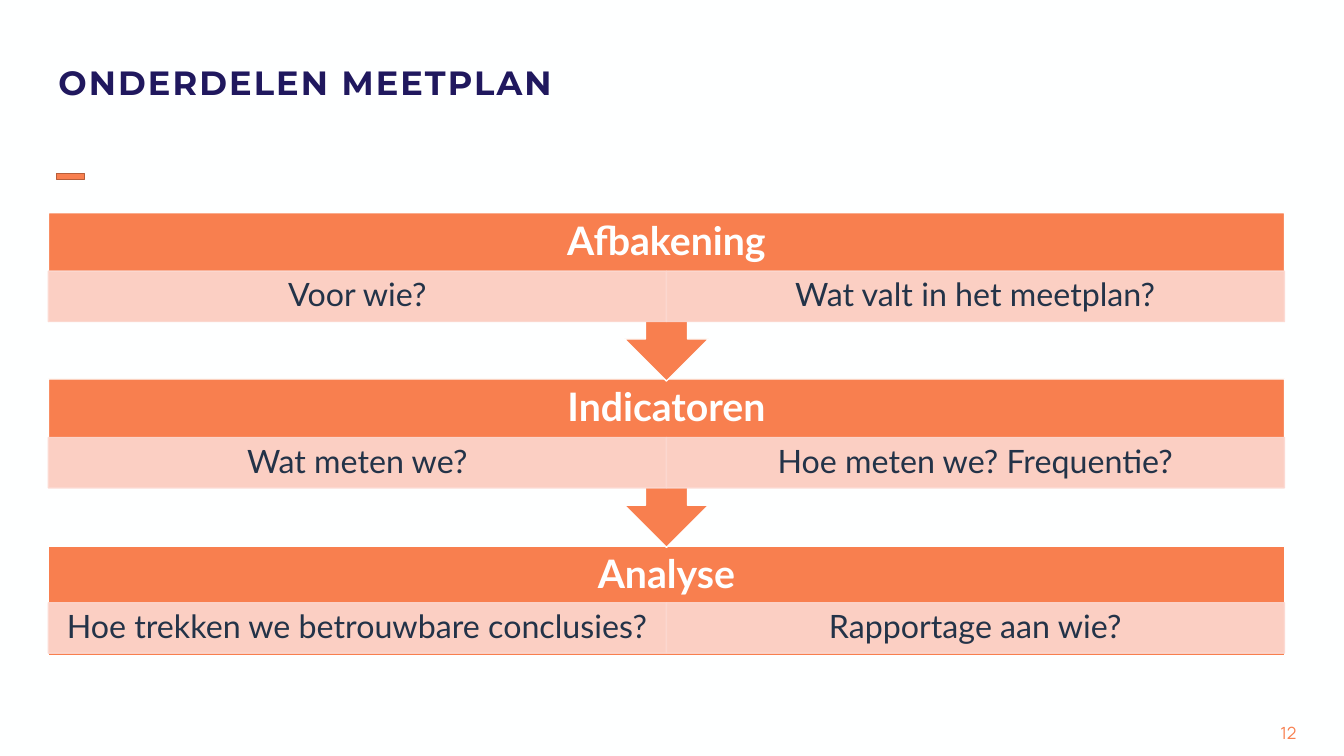
from dataclasses import dataclass

from lxml import etree
from pptx import Presentation
from pptx import util as u
from pptx.dml import color
from pptx.enum import shapes, text
from pptx.oxml import ns


@dataclass(frozen=True)
class Theme:
    background: str = "FEFFFF"
    accent: str = "F87F4F"
    accent_edge: str = "B75E3A"
    tint: str = "FCD8D0"
    ink: str = "233348"
    navy: str = "20185E"
    title_font: str = "Montserrat"
    body_font: str = "Lato"
    number_font: str = "Manrope"
    title_size: int = 24
    heading_size: int = 28
    answer_size: int = 23
    number_size: int = 12


THEME = Theme()
STEPS = [
    ("Afbakening", ["Voor wie?", "Wat valt in het meetplan?"]),
    ("Indicatoren", ["Wat meten we?", "Hoe meten we? Frequentie?"]),
    ("Analyse", ["Hoe trekken we betrouwbare conclusies?", "Rapportage aan wie?"]),
]


def px(length):
    return u.Emu(length * 9144)


def place(box):
    return [px(length) for length in box]


def rgb(value):
    return color.RGBColor.from_string(value)


def write(shape, wording, font, size, ink, bold=False, align=None, spacing=None):
    frame = shape.text_frame
    frame.word_wrap = True
    frame.text = wording
    paragraph = frame.paragraphs[0]
    paragraph.alignment = align
    paragraph.line_spacing = spacing
    paragraph.font.name = font
    paragraph.font.size = u.Pt(size)
    paragraph.font.bold = bold
    paragraph.font.color.rgb = rgb(ink)
    return frame


def add_block(slide, kind, box, fill, line):
    shape = slide.shapes.add_shape(kind, *place(box))
    shape.shadow.inherit = False
    shape.fill.solid()
    shape.fill.fore_color.rgb = rgb(fill)
    shape.line.color.rgb = rgb(line)
    shape.line.width = u.Pt(1)
    return shape


def add_title(slide, box, wording):
    title = slide.shapes.title
    title.left, title.top, title.width, title.height = place(box)
    frame = write(title, wording, THEME.title_font, THEME.title_size, THEME.navy,
                  bold=True, align=text.PP_ALIGN.LEFT, spacing=0.9)
    frame.auto_size = text.MSO_AUTO_SIZE.NONE
    frame.vertical_anchor = text.MSO_ANCHOR.MIDDLE
    frame.paragraphs[0].runs[0].font._element.set("spc", "150")


def add_answer(slide, box, wording):
    cell = add_block(slide, shapes.MSO_SHAPE.RECTANGLE, box, THEME.tint, THEME.tint)
    for tint in cell._element.spPr.iter(ns.qn("a:srgbClr")):
        etree.SubElement(tint, ns.qn("a:alpha"), val="90000")
    frame = write(cell, wording, THEME.body_font, THEME.answer_size, THEME.ink,
                  align=text.PP_ALIGN.CENTER, spacing=0.9)
    frame.vertical_anchor = text.MSO_ANCHOR.MIDDLE
    frame.margin_left = frame.margin_right = px(16)
    frame.margin_top = frame.margin_bottom = px(3)


def add_step(slide, box, heading, answers, last):
    left, top, width, height = box
    kind = shapes.MSO_SHAPE.RECTANGLE if last else shapes.MSO_SHAPE.UP_ARROW_CALLOUT
    block = add_block(slide, kind, box, THEME.accent, THEME.background)
    block.rotation = 0 if last else 180

    label = slide.shapes.add_textbox(*place((left, top, width, 59)))
    frame = write(label, heading, THEME.body_font, THEME.heading_size, THEME.background,
                  bold=True, align=text.PP_ALIGN.CENTER, spacing=0.9)
    frame.vertical_anchor = text.MSO_ANCHOR.MIDDLE
    frame.margin_top = frame.margin_bottom = 0

    answer_width = width // len(answers)
    answer_top = top + (56 if last else 58)
    for column, answer in enumerate(answers):
        cell_box = (left + column * answer_width, answer_top, answer_width, 50)
        add_answer(slide, cell_box, answer)


def add_steps(slide, box, steps):
    left, top, width, height = box
    final = len(steps) - 1
    last_height = 109
    for index in reversed(range(len(steps))):
        step_top = top + index * (height - last_height) // final
        step_height = last_height if index == final else 167
        add_step(slide, (left, step_top, width, step_height), *steps[index], index == final)


def add_slide_number(slide, box, number):
    label = slide.shapes.add_textbox(*place(box))
    write(label, number, THEME.number_font, THEME.number_size, THEME.accent)


def main():
    presentation = Presentation()
    presentation.slide_width, presentation.slide_height = px(1333), px(750)
    slide = presentation.slides.add_slide(presentation.slide_layouts[5])
    slide.background.fill.solid()
    slide.background.fill.fore_color.rgb = rgb(THEME.background)
    add_block(slide, shapes.MSO_SHAPE.RECTANGLE, (56, 172, 28, 6),
              THEME.accent, THEME.accent_edge)
    add_slide_number(slide, (1260, 712, 62, 24), "12")
    add_title(slide, (48, 56, 1224, 55), "ONDERDELEN MEETPLAN")
    add_steps(slide, (48, 211, 1226, 440), STEPS)
    presentation.save("out.pptx")


if __name__ == "__main__":
    main()
